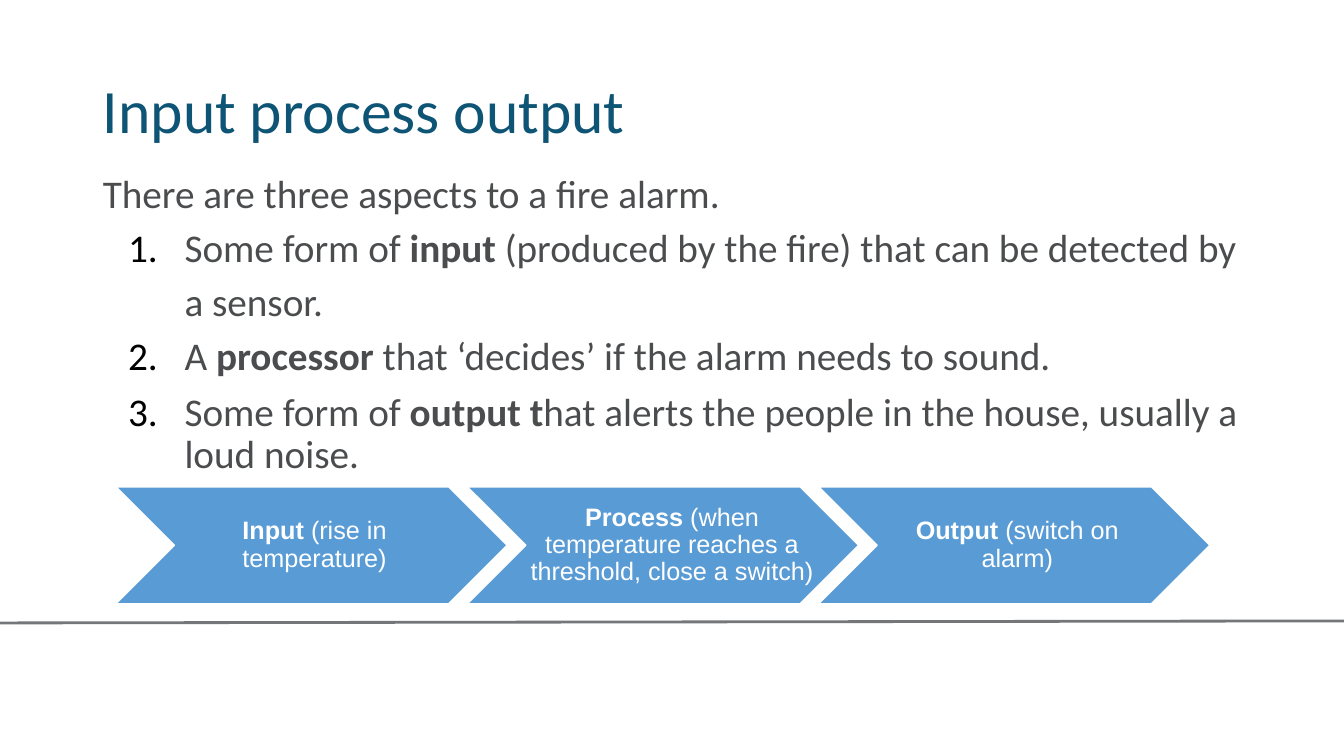
from pptx import Presentation
from pptx.dml.color import RGBColor
from pptx.enum.shapes import MSO_CONNECTOR, MSO_SHAPE
from pptx.enum.text import MSO_ANCHOR, MSO_AUTO_SIZE, PP_ALIGN
from pptx.oxml.ns import qn
from pptx.util import Inches, Pt
from lxml.etree import SubElement

TITLE = "Input process output"
INTRO = [("There are three aspects to a fire alarm.", False)]
ITEMS = [
    [("Some form of ", False), ("input ", True),
     ("(produced by the fire) that can be detected by a sensor.", False)],
    [("A ", False), ("processor ", True),
     ("that ‘decides’ if the alarm needs to sound.", False)],
    [("Some form of ", False), ("output t", True),
     ("hat alerts the people in the house, usually a loud noise.", False)],
]
STEPS = [
    ([("Input ", True), ("(rise in temperature)", False)], 2.33),
    ([("Process", True),
      (" (when temperature reaches a threshold, close a switch)", False)], 2.95),
    ([("Output", True), (" (switch on alarm)", False)], 2.33),
]
COLORS = {"title": "0E5475", "body": "4A4C4E", "step": "599BD5",
          "white": "FFFFFF", "rule": "747678", "number": "000000"}
WIDE, HIGH = 13.33, 7.5
LEFT, SPAN = 0.92, 11.5
FIRST, PITCH = 1.15, 3.485
TOP, STEP_W, STEP_H = 4.83, 3.88, 1.16
SHIFT = 0.06


def color(name):
    return RGBColor.from_string(COLORS[name])


def place(shape, *box):
    shape.left, shape.top, shape.width, shape.height = map(Inches, box)


def frame(shape, anchor, *pads):
    text = shape.text_frame
    text.word_wrap = True
    text.auto_size = MSO_AUTO_SIZE.NONE
    text.vertical_anchor = anchor
    (text.margin_left, text.margin_top,
     text.margin_right, text.margin_bottom) = map(Inches, pads)
    return text


def write(para, parts, face, size, tint, align, space, before=0):
    para.alignment = align
    para.line_spacing = space
    para.space_before = Pt(before)
    para.space_after = Pt(0)
    for words, bold in parts:
        run = para.add_run()
        run.text = words
        font = run.font
        font.name, font.size, font.bold = face, Pt(size), bold
        font.color.rgb = color(tint)


def bullet(para, number):
    props = para._p.get_or_add_pPr()
    props.set("marL", str(Inches(0.81 if number else 0)))
    props.set("indent", str(Inches(-0.56 if number else 0)))
    if number:
        tint = SubElement(props, qn("a:buClr"))
        SubElement(tint, qn("a:srgbClr"), val=COLORS["number"])
        SubElement(props, qn("a:buFont"), typeface="Calibri")
        SubElement(props, qn("a:buAutoNum"), type="arabicPeriod")
    else:
        SubElement(props, qn("a:buNone"))


def head(slide):
    title = slide.shapes.title
    place(title, LEFT, 0.4, SPAN, 1.45)
    text = frame(title, MSO_ANCHOR.MIDDLE, 0.1, 0.05, 0.1, 0.05)
    write(text.paragraphs[0], [(TITLE, False)], "Calibri", 44, "title",
          PP_ALIGN.LEFT, 0.9)


def body(slide):
    holder = slide.placeholders[1]
    place(holder, LEFT, 1.56, SPAN, 3.27)
    text = frame(holder, MSO_ANCHOR.TOP, 0.1, 0.05, 0.1, 0.05)
    for i, parts in enumerate([INTRO] + ITEMS):
        para = text.add_paragraph() if i else text.paragraphs[0]
        bullet(para, i > 0)
        last = i == len(ITEMS)
        write(para, parts, "Calibri", 28, "body", PP_ALIGN.LEFT,
              0.9 if last else 1.15, 10 if last else 0)


def rule(slide):
    line = slide.shapes.add_connector(
        MSO_CONNECTOR.STRAIGHT, 0, Inches(6.18), Inches(WIDE), Inches(6.16))
    line.line.color.rgb = color("rule")
    line.line.width = Pt(2)
    SubElement(line._element.spPr, qn("a:effectLst"))


def steps(slide):
    for i, (parts, width) in enumerate(STEPS):
        left = FIRST + i * PITCH
        arrow = slide.shapes.add_shape(MSO_SHAPE.CHEVRON, 0, 0, 0, 0)
        place(arrow, left, TOP, STEP_W, STEP_H)
        arrow.adjustments[0] = 0.5
        arrow.shadow.inherit = False
        arrow.fill.solid()
        arrow.fill.fore_color.rgb = color("step")
        arrow.line.color.rgb = color("white")
        arrow.line.width = Pt(1)
        label = slide.shapes.add_textbox(0, 0, 0, 0)
        inset = (STEP_W - width) / 2
        nudge = SHIFT if i == 1 else 0
        place(label, left + inset + nudge, TOP, width, STEP_H)
        text = frame(label, MSO_ANCHOR.MIDDLE, 0.09, 0.03, 0.03, 0.03)
        write(text.paragraphs[0], parts, "Arial", 18, "white",
              PP_ALIGN.CENTER, 0.9)


def main():
    deck = Presentation()
    deck.slide_width, deck.slide_height = Inches(WIDE), Inches(HIGH)
    slide = deck.slides.add_slide(deck.slide_layouts[1])
    for draw in (rule, head, body, steps):
        draw(slide)
    deck.save("out.pptx")


if __name__ == "__main__":
    main()
